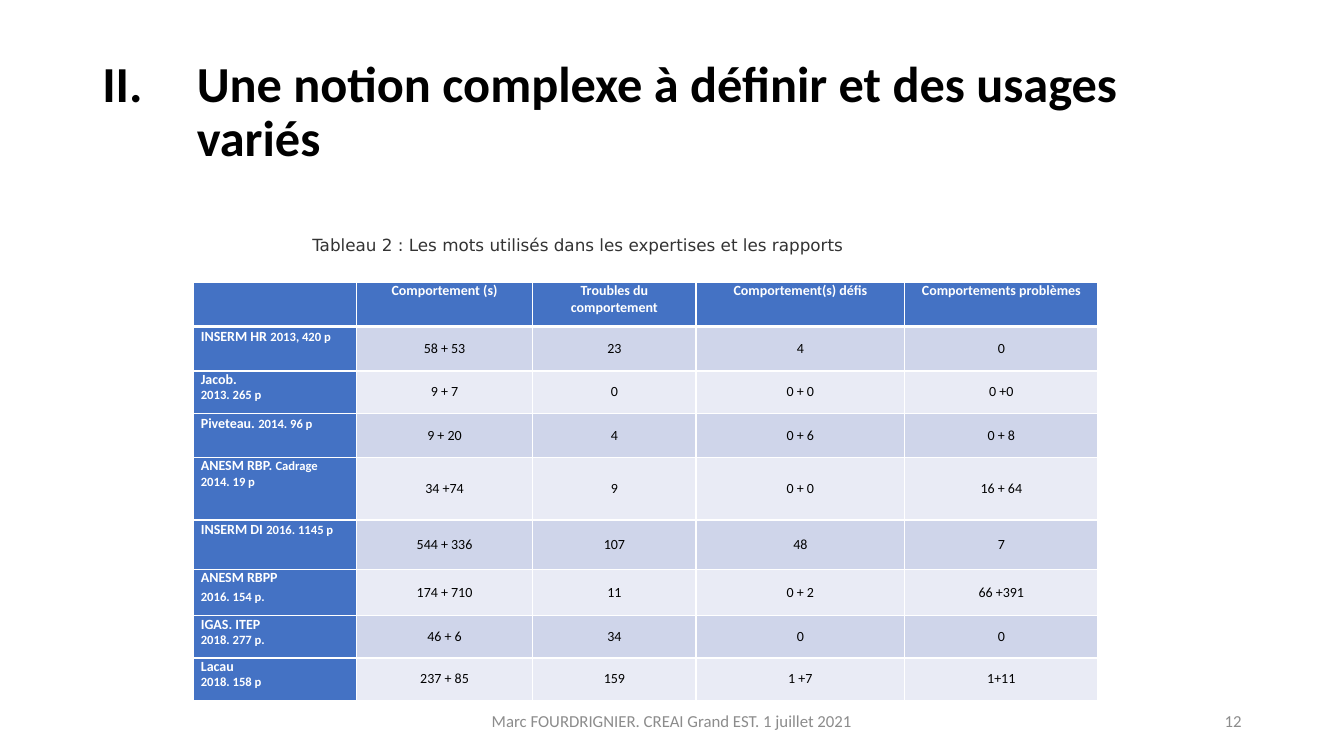
from lxml import etree
from pptx import Presentation
from pptx import util as u
from pptx.dml.color import RGBColor
from pptx.enum import text as t
from pptx.oxml.ns import qn

# Content
TITLE = "Une notion complexe à définir et des usages variés"
CAPTION = "Tableau 2\u00a0: Les mots utilisés dans les expertises et les rapports"
FOOTER = "Marc FOURDRIGNIER. CREAI Grand EST. 1 juillet 2021"
PAGE_NUMBER = "12"
HEADERS = ["", "Comportement (s)", "Troubles du comportement",
           "Comportement(s) défis", "Comportements problèmes"]
# Each report: height, label lines made of (text, size) runs, counts
REPORTS = [
    (31.7, [[("INSERM HR", 10), (" ", 11), ("2013, 420 p", 9)]], ["58 + 53", "23", "4", "0"]),
    (30.2, [[("Jacob.", 10)], [("2013. 265 p", 9)]], ["9 + 7", "0", "0 + 0", "0 +0"]),
    (31.7, [[("Piveteau.", 10), (" ", 11), ("2014. 96 p", 9)]], ["9 + 20", "4", "0 + 6", "0 + 8"]),
    (44.6, [[("ANESM RBP. ", 10), ("Cadrage", 9)], [("2014. 19 p", 9)]],
     ["34 +74", "9", "0 + 0", "16 + 64"]),
    (35.3, [[("INSERM DI", 10), (" ", 11), ("2016. 1145 p", 9)]],
     ["544 + 336", "107", "48", "7"]),
    (33.1, [[("ANESM RBPP", 10)], [("2016. 154 p.", 9), (" ", 11)]],
     ["174 + 710", "11", "0 + 2", "66 +391"]),
    (30.2, [[("IGAS. ITEP", 10)], [("2018. 277 p.", 9)]], ["46 + 6", "34", "0", "0"]),
    (30.2, [[("Lacau", 10)], [("2018. 158 p", 9)]], ["237 + 85", "159", "1 +7", "1+11"]),
]
HEADER_HEIGHT = 31.7
COLUMN_WIDTHS = [116, 126, 116.7, 149, 138.1]
COLORS = {"title": "000000", "caption": "333333", "footer": "8C8C8C", "header": "4472C4",
          "band": "CFD5EA", "light": "E9EBF5", "white": "FFFFFF", "count": "000000"}
FONT = "Calibri"
ALIGN = t.PP_ALIGN
ANCHOR = t.MSO_ANCHOR


def add_run(paragraph, words, size, color, bold=False, font=FONT):
    run = paragraph.add_run()
    run.text = words
    run.font.size = u.Pt(size)
    run.font.name = font
    run.font.bold = bold
    run.font.color.rgb = RGBColor.from_string(COLORS[color])


def add_text(slide, box, words, size, color, align, anchor=ANCHOR.MIDDLE, **style):
    shape = slide.shapes.add_textbox(*[u.Pt(length) for length in box])
    frame = shape.text_frame
    frame.word_wrap = True
    frame.vertical_anchor = anchor
    paragraph = frame.paragraphs[0]
    paragraph.alignment = align
    add_run(paragraph, words, size, color, **style)
    return paragraph


def add_borders(cell, top, bottom):
    properties = cell._tc.get_or_add_tcPr()
    for side, width in (("L", 1), ("R", 1), ("T", top), ("B", bottom)):
        line = etree.SubElement(properties, qn("a:ln" + side), w=str(u.Pt(width)))
        fill = etree.SubElement(line, qn("a:solidFill"))
        etree.SubElement(fill, qn("a:srgbClr"), val=COLORS["white"])


def fill_cell(cell, lines, fill, color, bold, align, anchor):
    cell.margin_left = cell.margin_right = u.Pt(5)
    cell.margin_top = cell.margin_bottom = 0
    cell.vertical_anchor = anchor
    cell.fill.solid()
    cell.fill.fore_color.rgb = RGBColor.from_string(COLORS[fill])
    frame = cell.text_frame
    for index, runs in enumerate(lines):
        paragraph = frame.add_paragraph() if index else frame.paragraphs[0]
        paragraph.alignment = align
        for words, size in runs:
            add_run(paragraph, words, size, color, bold)


def add_report_table(slide):
    heights = [HEADER_HEIGHT] + [height for height, _, _ in REPORTS]
    table = slide.shapes.add_table(
        len(heights), len(COLUMN_WIDTHS), u.Pt(138.5), u.Pt(201.6),
        u.Pt(sum(COLUMN_WIDTHS)), u.Pt(sum(heights))).table
    table.first_row = table.horz_banding = False
    for column, width in zip(table.columns, COLUMN_WIDTHS):
        column.width = u.Pt(width)
    for index, height in enumerate(heights):
        table.rows[index].height = u.Pt(height)
        for cell in table.rows[index].cells:
            add_borders(cell, 3 if index == 1 else 1, 3 if index == 0 else 1)

    # Header row
    for column, words in enumerate(HEADERS):
        lines = [[(words, 10)]] if words else []
        fill_cell(table.cell(0, column), lines, "header", "white", True, ALIGN.CENTER, ANCHOR.TOP)

    # One row per report, in alternating bands
    for row, (_, label, counts) in enumerate(REPORTS, 1):
        fill_cell(table.cell(row, 0), label, "header", "white", True, ALIGN.JUSTIFY, ANCHOR.TOP)
        band = "band" if row % 2 else "light"
        for column, count in enumerate(counts, 1):
            fill_cell(table.cell(row, column), [[(count, 10)]], band, "count", False,
                      ALIGN.CENTER, ANCHOR.MIDDLE)


def main():
    presentation = Presentation()
    presentation.slide_width = u.Pt(960)
    presentation.slide_height = u.Pt(540)
    slide = presentation.slides.add_slide(presentation.slide_layouts[6])

    # Numbered title
    title = add_text(slide, (66, 28.8, 828, 104.4), TITLE, 36, "title", ALIGN.LEFT, bold=True)
    title.line_spacing = 0.9
    properties = title._p.get_or_add_pPr()
    properties.set("marL", str(u.Pt(67.5)))
    properties.set("indent", str(u.Pt(-67.5)))
    etree.SubElement(properties, qn("a:buFont"), typeface=FONT)
    etree.SubElement(properties, qn("a:buAutoNum"), type="romanUcPeriod", startAt="2")

    # Table, footer and caption
    add_report_table(slide)
    add_text(slide, (318, 500.5, 324, 28.8), FOOTER, 12, "footer", ALIGN.CENTER)
    add_text(slide, (678, 500.5, 216, 28.8), PAGE_NUMBER, 12, "footer", ALIGN.RIGHT)
    add_text(slide, (216, 164, 410.4, 44), CAPTION, 12, "caption", ALIGN.LEFT,
             ANCHOR.TOP, font="DejaVu Sans")

    presentation.save("out.pptx")


if __name__ == "__main__":
    main()
